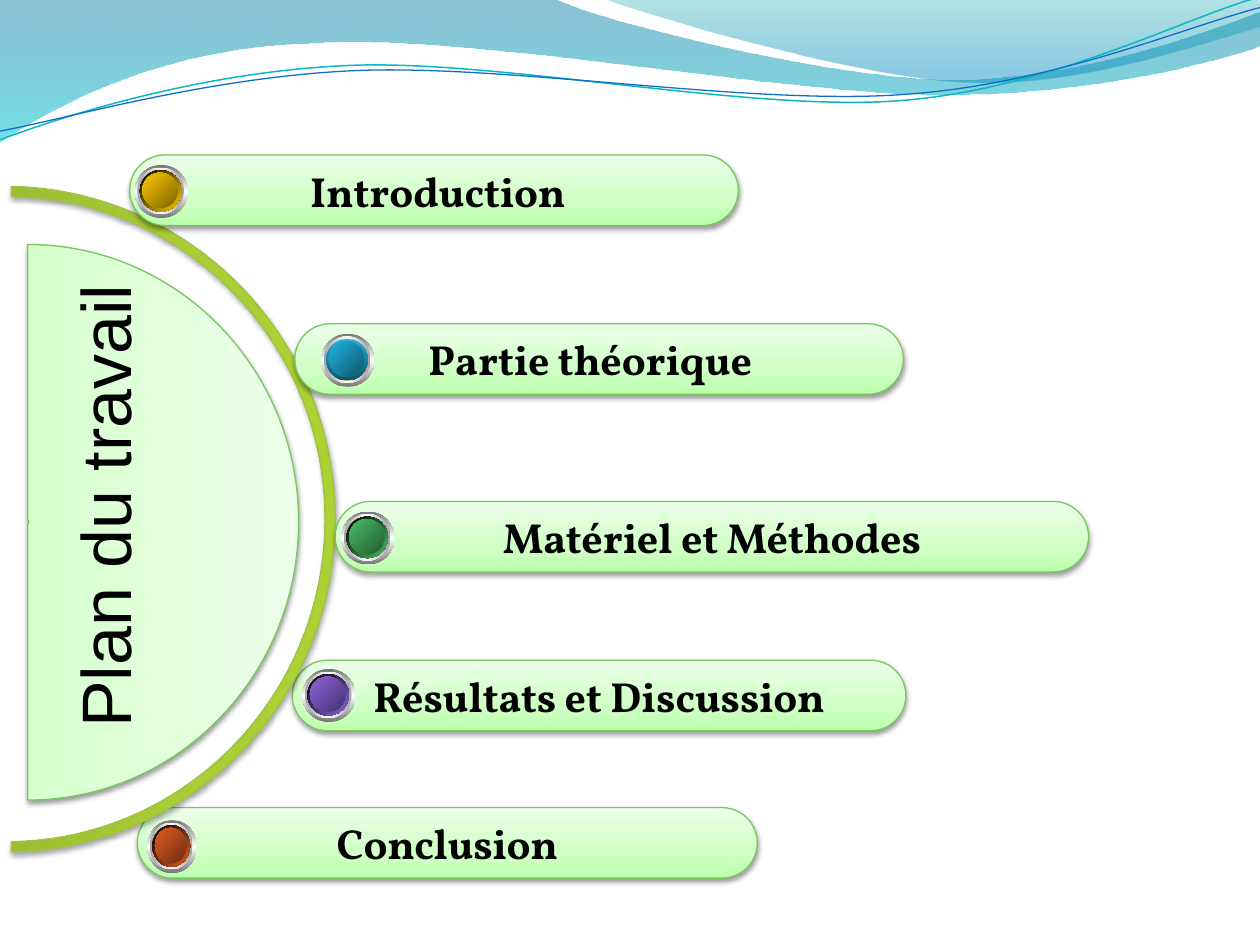
import math

import pptx
import pptx.dml.color
import pptx.enum.shapes
import pptx.enum.text
import pptx.oxml
import pptx.oxml.ns
import pptx.util
from lxml import etree

Inches = pptx.util.Inches
RGBColor = pptx.dml.color.RGBColor
qn = pptx.oxml.ns.qn
MSO_SHAPE = pptx.enum.shapes.MSO_SHAPE
PP_ALIGN = pptx.enum.text.PP_ALIGN
MSO_ANCHOR = pptx.enum.text.MSO_ANCHOR

BLACK = RGBColor(0x00, 0x00, 0x00)
WHITE = RGBColor(0xFF, 0xFF, 0xFF)
WAVE_BLUE = RGBColor(0x00, 0x74, 0xA1)
WAVE_CYAN = RGBColor(0x00, 0xC6, 0xCF)
CREST_TEAL = RGBColor(0x00, 0xA1, 0xA9)
CREST_BLUE = RGBColor(0x00, 0x8B, 0xBF)
LINE_TEAL = RGBColor(0x0A, 0xB8, 0xBF)
LINE_BLUE = RGBColor(0x0F, 0x6F, 0xC6)
PALE_GREEN = RGBColor(0xBC, 0xFF, 0xAD)
PALER_GREEN = RGBColor(0xCF, 0xFF, 0xC5)
PALEST_GREEN = RGBColor(0xEC, 0xFF, 0xE9)
GREEN_EDGE = RGBColor(0x78, 0xC8, 0x5D)
OLIVE_DARK = RGBColor(0x82, 0x9E, 0x29)
OLIVE = RGBColor(0xA9, 0xCE, 0x35)
OLIVE_LIGHT = RGBColor(0xAB, 0xD1, 0x32)
OLIVE_EDGE = RGBColor(0xA3, 0xC1, 0x44)
GREY = RGBColor(0x76, 0x76, 0x76)
SILVER = RGBColor(0xA2, 0xA2, 0xA2)
YELLOW = RGBColor(0xE2, 0xD7, 0x00)
YELLOW_DARK = RGBColor(0xAD, 0xA5, 0x00)
GOLD = RGBColor(0xFF, 0xCC, 0x00)
GOLD_DARK = RGBColor(0x7C, 0x63, 0x00)
BLUE = RGBColor(0x21, 0xB3, 0xE1)
BLUE_DARK = RGBColor(0x10, 0x57, 0x6D)
BLUE_RIM = RGBColor(0x0F, 0x53, 0x68)
GREEN = RGBColor(0x48, 0xBE, 0x67)
GREEN_DARK = RGBColor(0x23, 0x5C, 0x32)
PURPLE = RGBColor(0x8D, 0x67, 0xE1)
PURPLE_DARK = RGBColor(0x45, 0x32, 0x6D)
ORANGE = RGBColor(0xE3, 0x5E, 0x23)
ORANGE_DARK = RGBColor(0x6E, 0x2E, 0x11)

GREEN_STOPS = [(0, PALE_GREEN, 100), (35, PALER_GREEN, 100), (100, PALEST_GREEN, 100)]
OLIVE_STOPS = [(0, OLIVE_DARK, 100), (80, OLIVE, 100), (100, OLIVE_LIGHT, 100)]

presentation = pptx.Presentation()
presentation.slide_width, presentation.slide_height = Inches(10), Inches(7.5)
slide = presentation.slides.add_slide(presentation.slide_layouts[5])


def style(shape, stops, angle, edge=None, shadow_opacity=0):
    """Gradient (position, colour, opacity) at a clockwise angle, edge and soft shadow."""
    shape.fill.gradient()
    shape.fill.gradient_angle = (360 - angle) % 360
    properties = shape._element.spPr
    stop_list = properties.find(qn("a:gradFill")).find(qn("a:gsLst"))
    for old_stop in list(stop_list):
        stop_list.remove(old_stop)
    for position, colour, opacity in stops:
        stop = etree.SubElement(stop_list, qn("a:gs"), pos=str(position * 1000))
        tint = etree.SubElement(stop, qn("a:srgbClr"), val=str(colour))
        if opacity < 100:
            etree.SubElement(tint, qn("a:alpha"), val=str(opacity * 1000))
    if edge is None:
        shape.line.fill.background()
    else:
        shape.line.color.rgb = edge
        shape.line.width = pptx.util.Pt(0.75)
    shape.shadow.inherit = False
    if shadow_opacity:
        shadow = etree.SubElement(
            properties.find(qn("a:effectLst")), qn("a:outerShdw"), blurRad="39400",
            dist="20300", dir="5400000", rotWithShape="0")
        shade = etree.SubElement(shadow, qn("a:srgbClr"), val=str(BLACK))
        etree.SubElement(shade, qn("a:alpha"), val=str(shadow_opacity * 1000))


def outline(frame, rotation, segments, close=True):
    """Freeform of points (2 numbers) and Bezier curves (6), as they lie on the slide."""
    left, top, width, height = frame
    turn = math.radians(rotation)
    builder = slide.shapes.build_freeform(Inches(left), Inches(top))
    builder.add_line_segments([(Inches(left + width), Inches(top + height))], close=close)
    shape = builder.convert_to_shape()
    shape.rotation = rotation
    route = next(shape._element.iter(qn("a:path")))
    for command in list(route):
        route.remove(command)
    for index, numbers in enumerate(segments):
        tag = "a:cubicBezTo" if len(numbers) == 6 else "a:lnTo" if index else "a:moveTo"
        command = etree.SubElement(route, qn(tag))
        for x, y in zip(numbers[::2], numbers[1::2]):
            # Turn the point back into the unrotated frame
            across, down = x - left - width / 2, y - top - height / 2
            u = across * math.cos(turn) + down * math.sin(turn) + width / 2
            v = down * math.cos(turn) - across * math.sin(turn) + height / 2
            etree.SubElement(command, qn("a:pt"), x=str(int(Inches(u))), y=str(int(Inches(v))))
    if close:
        etree.SubElement(route, qn("a:close"))
    return shape


# Waves along the top
wave = outline((-0.01, -0.01, 10.02, 1.14), 0, [
    (0, 0), (4.4, -0.01), (4.76, 0.17, 6.64, 0.63, 7.58, 0.63),
    (8.53, 0.63, 9.58, 0.26, 10, 0.09), (10.01, 0.36),
    (9.83, 0.44, 8.7, 0.76, 7.46, 0.75), (6.22, 0.75, 3.82, 0.28, 2.57, 0.34),
    (1.29, 0.36, 0.46, 0.83, -0.01, 1.13)])
style(wave, [(0, WAVE_BLUE, 45), (100, WAVE_CYAN, 55)], 90)
crest = outline((4.79, -0.01, 5.21, 0.7), 0, [
    (4.79, -0.01), (5.09, 0.11, 6.82, 0.62, 7.69, 0.65),
    (8.56, 0.69, 9.61, 0.32, 10, 0.21), (10, 0)])
style(crest, [(0, CREST_TEAL, 30), (80, CREST_BLUE, 45)], 90)

wave_lines = [
    (LINE_TEAL, 0.85, (-0.02, 0.22, 10.02, 0.71),
     [(0, 1.11), (0.48, 0.93, 1.58, 0.57, 2.77, 0.52),
      (3.95, 0.47, 5.93, 0.89, 7.13, 0.8), (8.33, 0.71, 9.38, 0.15, 9.98, -0.02)]),
    (LINE_BLUE, 0.75, (-0.02, 0.3, 10.03, 0.58),
     [(0, 1.04), (0.47, 0.96, 1.64, 0.61, 2.83, 0.56),
      (4.03, 0.51, 5.97, 0.84, 7.17, 0.75), (8.36, 0.67, 9.41, 0.21, 10, 0.06)]),
]
for colour, width, frame, segments in wave_lines:
    wave_line = outline(frame, 357.3, segments, close=False)
    wave_line.fill.background()
    wave_line.line.color.rgb = colour
    wave_line.line.width = pptx.util.Pt(width)
    wave_line.shadow.inherit = False

# Topics, back to front: text, left, top, width, left and right inset
topics = [
    ("Conclusion", 1.09, 6.41, 4.92, 0.1, 0.1),
    ("Résultats et Discussion", 2.32, 5.24, 4.87, 0.1, 0.1),
    ("Matériel et Méthodes", 2.66, 3.98, 5.98, 0.1, 0.1),
    ("Partie théorique", 2.34, 2.57, 4.83, 0.1, 0.24),
    ("Introduction", 1.03, 1.23, 4.83, 0.16, 0.1),
]
topic_font = {"name": "Vollkorn", "size": pptx.util.Pt(24), "bold": True}
for index, (text, left, top, width, inset_left, inset_right) in enumerate(topics):
    # The arc and half disc lie over the two lowest topics only
    if index == 2:
        arc = outline((-2.59, 1.51, 5.28, 5.22), 90, [
            (0.09, 1.56), (1.47, 1.58, 2.58, 2.72, 2.58, 4.12),
            (2.58, 5.52, 1.47, 6.66, 0.09, 6.68), (0.09, 6.76),
            (1.51, 6.74, 2.66, 5.56, 2.66, 4.12), (2.66, 2.68, 1.51, 1.51, 0.09, 1.48)])
        style(arc, OLIVE_STOPS, 270, OLIVE_EDGE, 35)
        half_disc = outline((-1.99, 2, 4.41, 4.3), 90, [
            (0.22, 4.16), (0.22, 4.16, 0.23, 4.15, 0.23, 4.14),
            (0.23, 4.14, 0.22, 4.13, 0.22, 4.13), (0.22, 1.94),
            (1.41, 1.94, 2.37, 2.93, 2.37, 4.14), (2.37, 5.36, 1.41, 6.35, 0.22, 6.35)])
        style(half_disc, GREEN_STOPS, 270, GREEN_EDGE, 38)
    pill = slide.shapes.add_shape(MSO_SHAPE.ROUNDED_RECTANGLE, Inches(left), Inches(top),
                                  Inches(width), Inches(0.56))
    pill.adjustments[0] = 0.5
    style(pill, GREEN_STOPS, 270, GREEN_EDGE, 38)
    frame_format = {"word_wrap": False, "vertical_anchor": MSO_ANCHOR.MIDDLE,
                    "margin_left": Inches(inset_left), "margin_right": Inches(inset_right)}
    for name, value in frame_format.items():
        setattr(pill.text_frame, name, value)
    paragraph = pill.text_frame.paragraphs[0]
    paragraph.text = text
    paragraph.alignment = PP_ALIGN.CENTER
    for name, value in topic_font.items():
        setattr(paragraph.runs[0].font, name, value)
    paragraph.runs[0].font.color.rgb = BLACK

# Round buttons: left, top, width, colour, dark colour, rim colours and angle
buttons = [
    (1.07, 1.31, 0.42, GOLD, GOLD_DARK, (BLACK, GOLD), 45),
    (2.55, 2.65, 0.42, BLUE, BLUE_DARK, (BLUE, BLUE_RIM), 90),
    (2.4, 5.31, 0.42, PURPLE, PURPLE_DARK, (BLACK, PURPLE), 45),
    (1.17, 6.51, 0.39, ORANGE, ORANGE_DARK, (BLACK, ORANGE), 45),
    (2.71, 4.06, 0.42, GREEN, GREEN_DARK, (BLACK, GREEN), 45),
]
for left, top, width, colour, dark, rim, rim_angle in buttons:
    group = slide.shapes.add_group_shape()
    layers = [
        (0, 0, (GREY, WHITE, GREY), 90),
        (0.02, 0.05, (SILVER, WHITE, SILVER), 0),
        (0.04, 0.09, (WHITE, YELLOW, WHITE), 45),
        (0.04, 0.09, rim, rim_angle),
        (0.06, 0.14, (YELLOW_DARK, YELLOW, YELLOW_DARK), 315),
        (0.06, 0.14, (colour, dark), 45),
    ]
    for inset, shrink, colours, angle in layers:
        disc = group.shapes.add_shape(
            MSO_SHAPE.OVAL, Inches(left + inset), Inches(top + inset),
            Inches(width - shrink), Inches(0.42 - shrink))
        gap = 100 // (len(colours) - 1)
        style(disc, [(gap * i, tone, 100) for i, tone in enumerate(colours)], angle)

# Vertical title, in front of the half disc
title = slide.shapes.title
title_format = {"left": Inches(-1.06), "top": Inches(3.61), "width": Inches(3.76),
                "height": Inches(0.77), "rotation": 270}
title_frame_format = {"text": "Plan du travail", "word_wrap": False,
                      "vertical_anchor": MSO_ANCHOR.TOP,
                      "auto_size": pptx.enum.text.MSO_AUTO_SIZE.NONE}
title_font = {"name": "Arial", "size": pptx.util.Pt(40)}
for target, values in ((title, title_format), (title.text_frame, title_frame_format)):
    for name, value in values.items():
        setattr(target, name, value)
paragraph = title.text_frame.paragraphs[0]
paragraph.alignment = PP_ALIGN.LEFT
for name, value in title_font.items():
    setattr(paragraph.runs[0].font, name, value)
paragraph.runs[0].font.color.rgb = BLACK
slide.shapes._spTree.append(title._element)

presentation.save("out.pptx")
